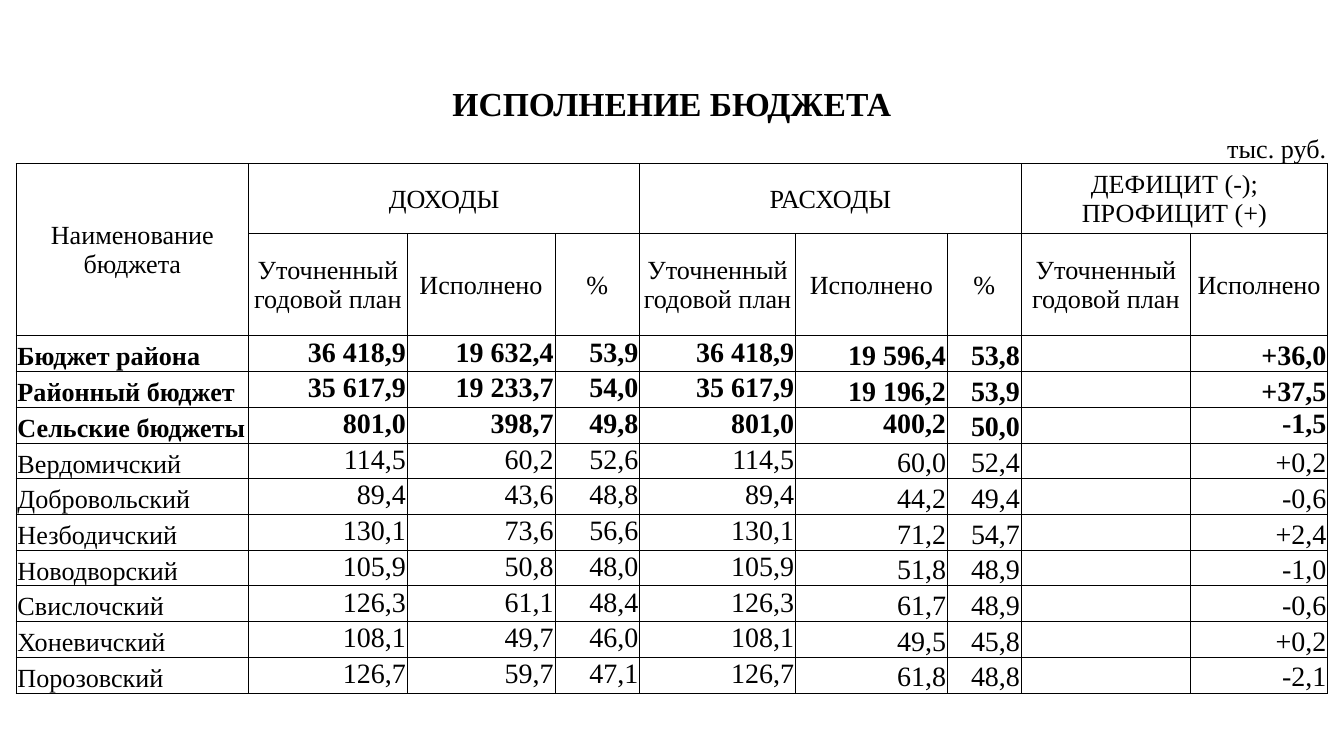
from dataclasses import dataclass

from lxml import etree
from pptx import Presentation
from pptx import util as u
from pptx.dml.color import RGBColor
from pptx.enum import text
from pptx.oxml.ns import qn

SLIDE_W = u.Inches(10)
SLIDE_H = SLIDE_W * 9 // 16


@dataclass
class Theme:
    font: str = "Times New Roman"
    ink: str = "000000"
    title: float = 18
    label: float = 14
    figure: float = 15
    rule: float = 0.5
    inset: float = 0.01


THEME = Theme()
LEFT, CENTER, RIGHT = text.PP_ALIGN.LEFT, text.PP_ALIGN.CENTER, text.PP_ALIGN.RIGHT
TOP, MIDDLE, BOTTOM = text.MSO_ANCHOR.TOP, text.MSO_ANCHOR.MIDDLE, text.MSO_ANCHOR.BOTTOM
NO_STYLE = "{2D5ABB26-0587-4C30-8999-92F81FD0307C}"

COL_WIDTHS = [1.73, 1.01, 0.17, 0.73, 0.37, 0.63, 1.16, 0.9, 0.23, 0.55, 1.26, 0.12, 0.9]
HEAD_HEIGHTS = [0.34, 0.27, 0.52, 0.76]
TITLE_ROW, UNIT_ROW, GROUP_ROW, FIELD_ROW = range(4)

# First and last grid column of each field
FIELDS = [(0, 0), (1, 2), (3, 4), (5, 5), (6, 6), (7, 8), (9, 9), (10, 10), (11, 12)]
FIELD_ANCHORS = [BOTTOM, TOP, TOP, TOP, TOP, BOTTOM, BOTTOM, BOTTOM, BOTTOM]
UNIT_SPANS = [(2, 3), (4, 5), (8, 9), (10, 11)]
RAISED = {("Сельские бюджеты", 5), ("Сельские бюджеты", 8)}
PLAN, DONE = "Уточненный годовой план", "Исполнено"
FIELD_NAMES = [PLAN, DONE, "%", PLAN, DONE, "%", PLAN, DONE]
GROUPS = [("ДОХОДЫ", 1, 5), ("РАСХОДЫ", 6, 9), ("ДЕФИЦИТ (-); ПРОФИЦИТ (+)", 10, 12)]

TOTAL_ROWS = 3
BUDGETS = [
    ("Бюджет района", "36 418,9", "19 632,4", "53,9", "36 418,9", "19 596,4", "53,8", "", "+36,0"),
    ("Районный бюджет", "35 617,9", "19 233,7", "54,0", "35 617,9", "19 196,2", "53,9", "", "+37,5"),
    ("Сельские бюджеты", "801,0", "398,7", "49,8", "801,0", "400,2", "50,0", "", "-1,5"),
    ("Вердомичский", "114,5", "60,2", "52,6", "114,5", "60,0", "52,4", "", "+0,2"),
    ("Добровольский", "89,4", "43,6", "48,8", "89,4", "44,2", "49,4", "", "-0,6"),
    ("Незбодичский", "130,1", "73,6", "56,6", "130,1", "71,2", "54,7", "", "+2,4"),
    ("Новодворский", "105,9", "50,8", "48,0", "105,9", "51,8", "48,9", "", "-1,0"),
    ("Свислочский", "126,3", "61,1", "48,4", "126,3", "61,7", "48,9", "", "-0,6"),
    ("Хоневичский", "108,1", "49,7", "46,0", "108,1", "49,5", "45,8", "", "+0,2"),
    ("Порозовский", "126,7", "59,7", "47,1", "126,7", "61,8", "48,8", "", "-2,1"),
]


def write(cell, words, size=THEME.label, bold=False, align=CENTER, anchor=MIDDLE):
    cell.vertical_anchor = anchor
    p = cell.text_frame.paragraphs[0]
    p.alignment = align
    r = p.add_run()
    r.text = words
    r.font.name = THEME.font
    r.font.size = u.Pt(size)
    r.font.bold = bold
    r.font.color.rgb = RGBColor.from_string(THEME.ink)


def rule_cell(cell, ruled_sides):
    """Draw the given sides (letters of LRTB) and hide the others."""
    props = cell._tc.get_or_add_tcPr()
    for i, side in enumerate("LRTB"):
        ln = etree.Element(qn("a:ln" + side), w=str(u.Pt(THEME.rule)))
        if side in ruled_sides:
            fill = etree.SubElement(ln, qn("a:solidFill"))
            etree.SubElement(fill, qn("a:srgbClr"), val=THEME.ink)
        else:
            etree.SubElement(ln, qn("a:noFill"))
        props.insert(i, ln)


def prepare_cell(cell, ruled_sides):
    inset = u.Inches(THEME.inset)
    cell.margin_left = cell.margin_right = cell.margin_top = inset
    cell.margin_bottom = 0
    cell.fill.background()
    rule_cell(cell, ruled_sides)
    # Keeps empty cells from stretching their row
    p = cell.text_frame.paragraphs[0]
    etree.SubElement(p._p, qn("a:endParaRPr"), sz=str(THEME.label * 100))


def make_grid(slide, left, top, width, height):
    rows = len(HEAD_HEIGHTS) + len(BUDGETS)
    frame = slide.shapes.add_table(rows, len(COL_WIDTHS), left, top, width, height)
    table = frame.table
    table.first_row = table.horz_banding = False
    table._tbl.tblPr.find(qn("a:tableStyleId")).text = NO_STYLE
    for col, share in zip(table.columns, COL_WIDTHS):
        col.width = int(width * share / sum(COL_WIDTHS))
    heads = [u.Inches(h) for h in HEAD_HEIGHTS]
    body = (height - sum(heads)) // len(BUDGETS)
    for row, h in zip(table.rows, heads + [body] * len(BUDGETS)):
        row.height = h
    edges = {TITLE_ROW: "", UNIT_ROW: "B"}
    for y in range(rows):
        for x in range(len(COL_WIDTHS)):
            prepare_cell(table.cell(y, x), edges.get(y, "LRTB"))
    return table


def span(table, row, first, last, last_row=None):
    cell = table.cell(row, first)
    end = row if last_row is None else last_row
    if (end, last) != (row, first):
        cell.merge(table.cell(end, last))
    return cell


def fill_heading(table):
    last = len(COL_WIDTHS) - 1
    write(span(table, TITLE_ROW, 0, last), "ИСПОЛНЕНИЕ БЮДЖЕТА", size=THEME.title, bold=True)
    for cols in UNIT_SPANS:
        span(table, UNIT_ROW, *cols)
    write(table.cell(UNIT_ROW, last), "тыс. руб.", align=RIGHT, anchor=BOTTOM)
    write(span(table, GROUP_ROW, 0, 0, FIELD_ROW), "Наименование бюджета")
    for name, first, end in GROUPS:
        write(span(table, GROUP_ROW, first, end), name)
    for name, cols in zip(FIELD_NAMES, FIELDS[1:]):
        write(span(table, FIELD_ROW, *cols), name)


def fill_budgets(table):
    for i, budget in enumerate(BUDGETS):
        for j, (words, cols) in enumerate(zip(budget, FIELDS)):
            cell = span(table, len(HEAD_HEIGHTS) + i, *cols)
            if not words:
                continue
            write(cell, words, bold=i < TOTAL_ROWS,
                  size=THEME.figure if j else THEME.label,
                  align=RIGHT if j else LEFT,
                  anchor=TOP if (budget[0], j) in RAISED else FIELD_ANCHORS[j])


def budget_table(slide, left, top, width, height):
    table = make_grid(slide, left, top, width, height)
    fill_heading(table)
    fill_budgets(table)


def main():
    prs = Presentation()
    prs.slide_width, prs.slide_height = SLIDE_W, SLIDE_H
    slide = prs.slides.add_slide(prs.slide_layouts[6])
    budget_table(slide, u.Inches(0.12), u.Inches(0.61), u.Inches(9.76), u.Inches(4.55))
    prs.save("out.pptx")


if __name__ == "__main__":
    main()
